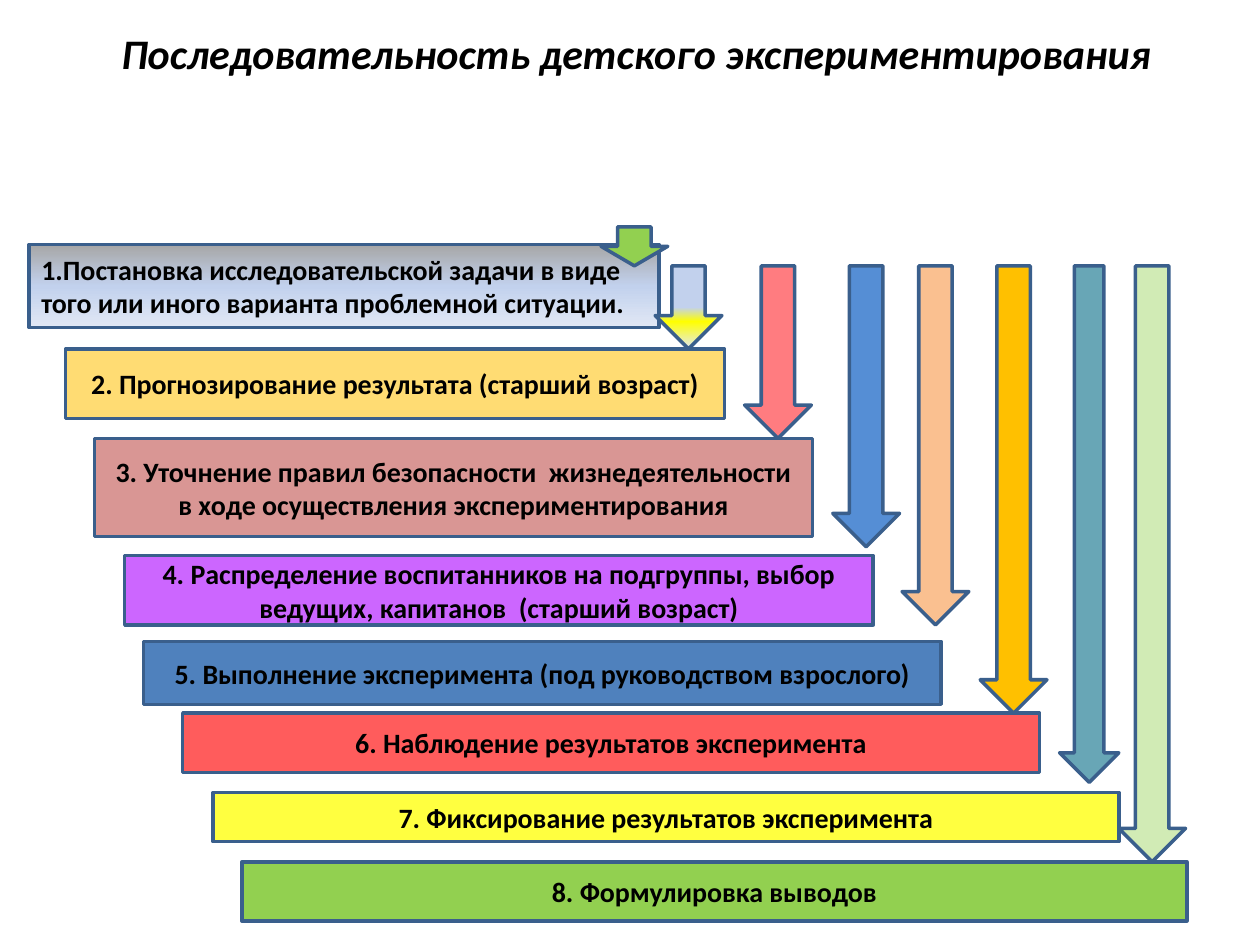
from lxml import etree
from pptx import Presentation
from pptx.dml.color import RGBColor
from pptx.enum import shapes, text
from pptx.oxml import ns
from pptx.util import Inches, Pt

FONT = "Calibri"
EDGE = "3A5F8C"
TOP = 2.11  # shared top of the arrows
STEEL = [(0, "A6A6A6"), (50, "C2D1ED"), (100, "E1E8F5")]
GLOW = [(50, "C2D1ED"), (67, "FFFF00"), (100, "E1E8F5")]

# wording, box place, box fill, opacity
BOXES = [
    ("1.Постановка исследовательской задачи в виде того или иного варианта "
     "проблемной ситуации.", (0.23, 1.94, 5, 0.66), STEEL, 100),
    ("2. Прогнозирование результата (старший возраст)",
     (0.52, 2.77, 5.23, 0.55), "FFC000", 55),
    ("3. Уточнение правил безопасности  жизнедеятельности в ходе "
     "осуществления экспериментирования", (0.75, 3.48, 5.7, 0.78), "D99694", 100),
    ("4. Распределение воспитанников на подгруппы, выбор ведущих, капитанов  "
     "(старший возраст)", (0.99, 4.41, 5.94, 0.55), "CC66FF", 100),
    ("5. Выполнение эксперимента (под руководством взрослого)",
     (1.14, 5.09, 6.33, 0.5), "4F81BD", 100),
    ("6. Наблюдение результатов эксперимента",
     (1.45, 5.66, 6.8, 0.47), "FF0000", 64),
    ("7. Фиксирование результатов эксперимента",
     (1.69, 6.29, 7.19, 0.39), "FFFF00", 75),
    ("8. Формулировка выводов", (1.92, 6.84, 7.5, 0.47), "92D050", 100),
]

# left, top, width, tip, fill, opacity
ARROWS = [
    (4.77, 1.8, 0.53, TOP, "92D050", 100),
    (5.2, TOP, 0.53, 2.77, GLOW, 100),
    (5.91, TOP, 0.53, 3.48, "FF7C80", 100),
    (6.61, TOP, 0.53, 4.34, "558ED5", 100),
    (7.16, TOP, 0.53, 4.96, "FAC090", 100),
    (7.78, TOP, 0.53, 5.66, "FFC000", 100),
    (8.41, TOP, 0.47, 6.21, "31859C", 73),
    (8.88, TOP, 0.53, 6.84, "92D050", 42),
]


def rgb(code):
    return RGBColor.from_string(code)


def blend(shape, stops):
    """Fill from top to bottom through (percent, colour) stops."""
    shape.fill.gradient()
    shape.fill.gradient_angle = 270
    group = shape.fill._xPr.find(".//" + ns.qn("a:gsLst"))
    for old in list(group):
        group.remove(old)
    for place, code in stops:
        stop = etree.SubElement(group, ns.qn("a:gs"), pos=str(place * 1000))
        etree.SubElement(stop, ns.qn("a:srgbClr"), val=code)


def paint(shape, fill, alpha):
    shape.shadow.inherit = False
    shape.line.color.rgb = rgb(EDGE)
    shape.line.width = Pt(2)
    if isinstance(fill, list):
        blend(shape, fill)
        return
    shape.fill.solid()
    shape.fill.fore_color.rgb = rgb(fill)
    if alpha < 100:
        tone = shape.fill._xPr.find(".//" + ns.qn("a:srgbClr"))
        etree.SubElement(tone, ns.qn("a:alpha"), val=str(alpha * 1000))


def write(shape, words, size, align, italic=None):
    frame = shape.text_frame
    frame.word_wrap = True
    frame.vertical_anchor = text.MSO_ANCHOR.MIDDLE
    para = frame.paragraphs[0]
    para.alignment = align
    run = para.add_run()
    run.text = words
    font = run.font
    font.name, font.size = FONT, Pt(size)
    font.bold, font.italic = True, italic
    font.color.rgb = rgb("000000")


def add_title(slide, words):
    box = slide.shapes.add_textbox(*map(Inches, (0.7, 0, 8.7, 0.84)))
    write(box, words, 24, text.PP_ALIGN.CENTER, True)


def add_box(slide, words, place, fill, alpha, align):
    box = slide.shapes.add_shape(shapes.MSO_SHAPE.RECTANGLE, *map(Inches, place))
    paint(box, fill, alpha)
    write(box, words, 16, align)


def add_arrow(slide, left, top, width, tip, fill, alpha):
    place = map(Inches, (left, top, width, tip - top))
    arrow = slide.shapes.add_shape(shapes.MSO_SHAPE.DOWN_ARROW, *place)
    paint(arrow, fill, alpha)


def main():
    deck = Presentation()
    deck.slide_width, deck.slide_height = Inches(10), Inches(7.5)
    slide = deck.slides.add_slide(deck.slide_layouts[6])
    add_title(slide, "Последовательность детского экспериментирования")
    align = text.PP_ALIGN.LEFT
    for box, arrow in zip(BOXES, ARROWS):
        add_box(slide, *box, align)
        add_arrow(slide, *arrow)
        align = text.PP_ALIGN.CENTER  # only the first step is set left
    deck.save("out.pptx")


if __name__ == "__main__":
    main()
